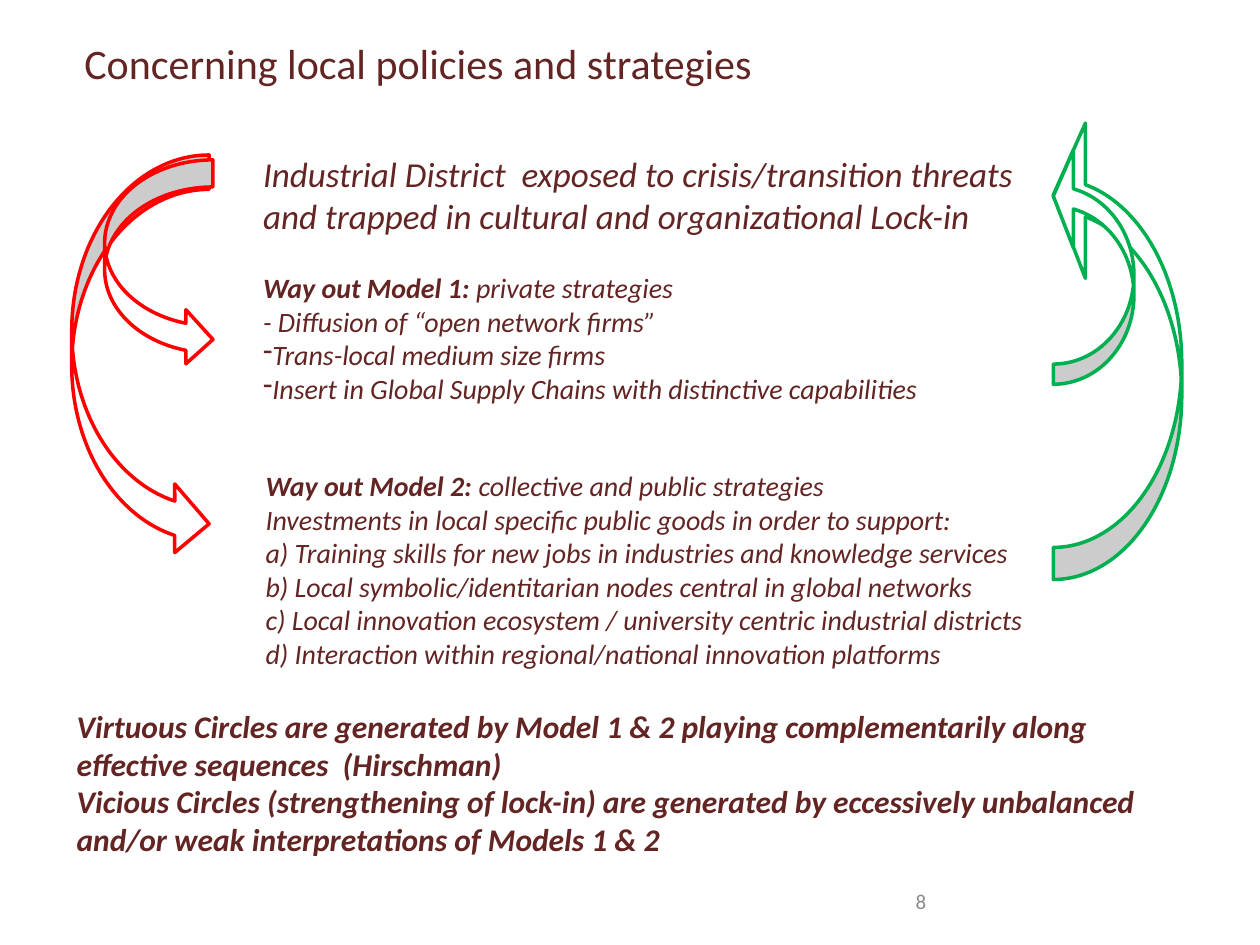
from dataclasses import dataclass
from typing import NamedTuple

from lxml.etree import SubElement
from pptx import Presentation
from pptx.dml.color import RGBColor
from pptx.enum.shapes import MSO_SHAPE
from pptx.enum.text import MSO_ANCHOR, MSO_AUTO_SIZE, PP_ALIGN
from pptx.oxml.ns import qn
from pptx.util import Pt


@dataclass(frozen=True)
class Theme:
    font: str = "Calibri"
    ink: str = "632523"
    grey: str = "8B8B8B"
    red: str = "FF0000"
    green: str = "00B050"
    white: str = "FFFFFF"
    title: int = 24
    lead: int = 20
    close: int = 18
    body: int = 16
    page: int = 12
    line: int = 2


THEME = Theme()


class Box(NamedTuple):
    left: float
    top: float
    width: float
    height: float


class Para(NamedTuple):
    text: str
    size: int = THEME.body
    head: str = ""  # bold words before the text
    bold: bool = False
    italic: bool = True
    bullet: str = ""
    gap: float = 0
    color: str = THEME.ink


class Block(NamedTuple):
    box: Box
    paras: list[Para]
    anchor: MSO_ANCHOR = MSO_ANCHOR.TOP


class Arrow(NamedTuple):
    box: Box
    kind: MSO_SHAPE
    color: str
    head: float
    flip: bool = False


TITLE = Block(Box(41, 18, 636, 36), [
    Para("Concerning local policies and strategies", THEME.title, italic=False),
])

BLOCKS = [
    # Second way out
    Block(Box(144.7, 264.2, 455.8, 124.6), [
        Para("collective and public strategies", head="Way out Model 2: "),
        Para("Investments in local specific public goods in order to support:"),
        Para("a) Training skills for new jobs in industries and knowledge services"),
        Para("b) Local symbolic/identitarian nodes central in global networks"),
        Para("c) Local innovation ecosystem / university centric industrial districts"),
        Para("d) Interaction within regional/national innovation platforms"),
    ]),
    # Starting point and first way out
    Block(Box(143.3, 83.5, 445, 163.4), [
        Para("Industrial District  exposed to crisis/transition threats "
             "and trapped in cultural and organizational Lock-in", THEME.lead),
        Para("private strategies", head="Way out Model 1: ", gap=19.5),
        Para("- Diffusion of “open network firms”"),
        Para("Trans-local medium size firms", bullet="-"),
        Para("Insert in Global Supply Chains with distinctive capabilities", bullet="-"),
    ]),
    # Conclusions
    Block(Box(36.7, 400.3, 652.3, 102.2), [
        Para("Virtuous Circles are generated by Model 1 & 2 playing complementarily "
             "along effective sequences  (Hirschman)", THEME.close, bold=True),
        Para("Vicious Circles (strengthening of lock-in) are generated by eccessively "
             "unbalanced and/or weak interpretations of Models 1 & 2",
             THEME.close, bold=True),
    ]),
    # Page number
    Block(Box(516.2, 500.4, 167.8, 28.8), [
        Para("8", THEME.page, italic=False, color=THEME.grey),
    ], MSO_ANCHOR.MIDDLE),
]

RIGHT, LEFT = MSO_SHAPE.CURVED_RIGHT_ARROW, MSO_SHAPE.CURVED_LEFT_ARROW
ARROWS = [
    Arrow(Box(41, 88.6, 78.5, 230.4), RIGHT, THEME.red, 0.5),
    Arrow(Box(59.8, 91.4, 61.9, 118.1), RIGHT, THEME.red, 0.5),
    Arrow(Box(601.9, 67, 73.4, 264.2), LEFT, THEME.green, 1.21, True),
    Arrow(Box(601.9, 84.2, 46.1, 135.4), LEFT, THEME.green, 1.21, True),
]


def place(box: Box) -> list[Pt]:
    return [Pt(n) for n in box]


def write(shape, block: Block) -> None:
    frame = shape.text_frame
    frame.word_wrap = True
    frame.auto_size = MSO_AUTO_SIZE.NONE
    frame.vertical_anchor = block.anchor
    for i, item in enumerate(block.paras):
        para = frame.add_paragraph() if i else frame.paragraphs[0]
        para.alignment = PP_ALIGN.LEFT
        para.space_before = Pt(item.gap)
        if item.bullet:
            props = para._p.get_or_add_pPr()
            props.set("marL", "0")
            props.set("indent", "0")
            SubElement(props, qn("a:buFontTx"))
            SubElement(props, qn("a:buChar")).set("char", item.bullet)
        font = para.font
        font.name, font.size = THEME.font, Pt(item.size)
        font.italic = item.italic
        font.color.rgb = RGBColor.from_string(item.color)
        if item.head:
            run = para.add_run()
            run.text = item.head
            run.font.bold = True
        else:
            font.bold = item.bold
        para.add_run().text = item.text


def draw(slide, arrow: Arrow) -> None:
    shape = slide.shapes.add_shape(arrow.kind, *place(arrow.box))
    shape.shadow.inherit = False
    for i, value in enumerate((0.25, arrow.head, 0.25)):
        shape.adjustments[i] = value
    shape.fill.solid()
    shape.fill.fore_color.rgb = RGBColor.from_string(THEME.white)
    shape.line.color.rgb = RGBColor.from_string(arrow.color)
    shape.line.width = Pt(THEME.line)
    if arrow.flip:
        shape._element.spPr.find(qn("a:xfrm")).set("flipV", "1")


def main() -> None:
    deck = Presentation()
    deck.slide_width, deck.slide_height = Pt(720), Pt(540)
    slide = deck.slides.add_slide(deck.slide_layouts[5])

    # Title
    title = slide.shapes.title
    title.left, title.top, title.width, title.height = place(TITLE.box)
    write(title, TITLE)

    # Text blocks
    for block in BLOCKS:
        write(slide.shapes.add_textbox(*place(block.box)), block)

    # Curved arrows
    for arrow in ARROWS:
        draw(slide, arrow)

    deck.save("out.pptx")


if __name__ == "__main__":
    main()
